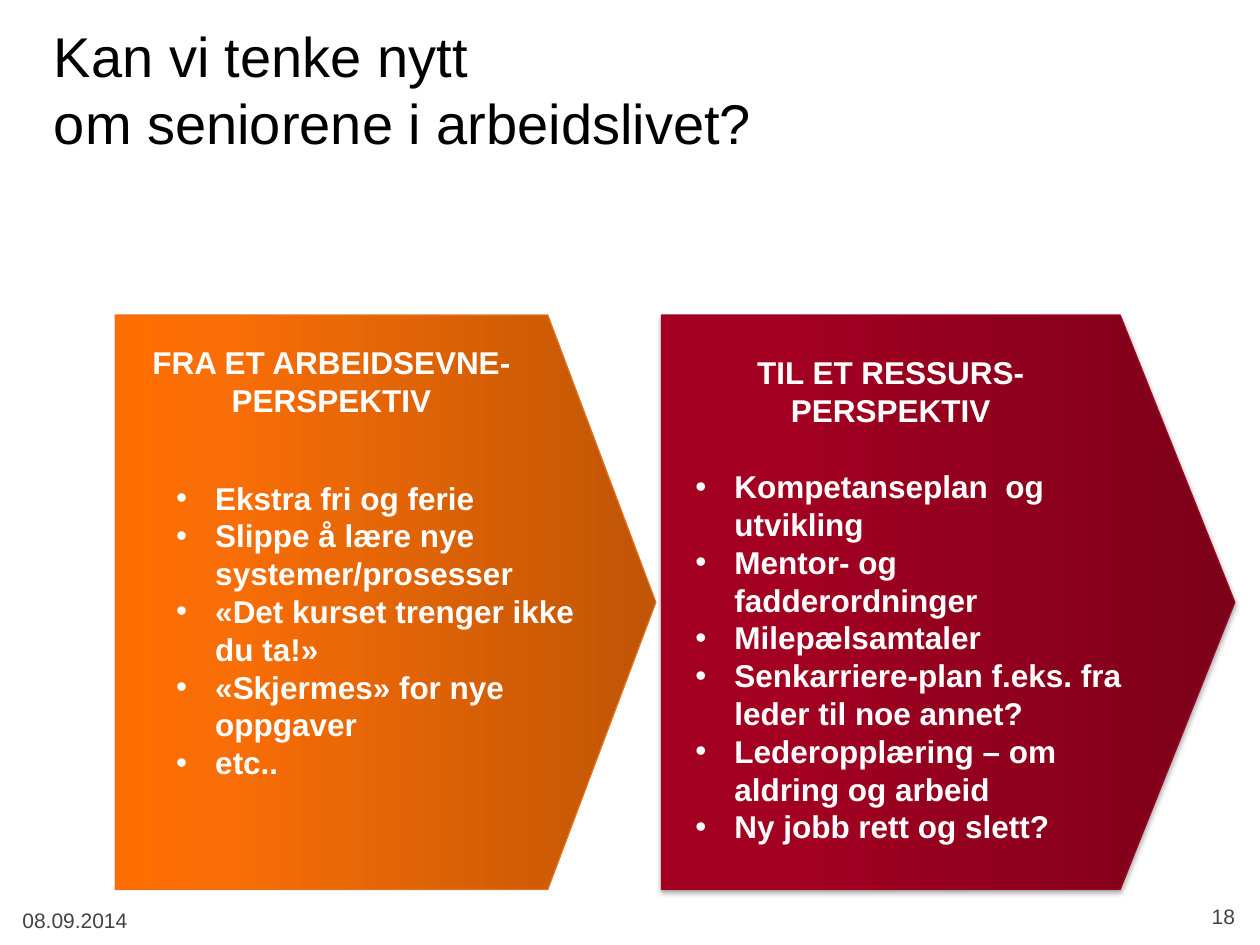
from lxml.etree import SubElement
from pptx import Presentation
from pptx.dml.color import RGBColor as RGB
from pptx.enum.shapes import MSO_SHAPE as SHAPE
from pptx.enum.text import MSO_ANCHOR as ANCHOR, PP_ALIGN as ALIGN
from pptx.oxml.ns import qn
from pptx.util import Inches, Pt

COLORS = {
    "black": "000000", "white": "FFFFFF", "grey": "424342",
    "orange": ["C05505", "F96E06", "FF6E01"], "orange_line": "E4731E",
    "red": ["7D0019", "A30021", "A40021"], "red_line": "9F0524",
}
STOPS = [0, 80, 100]
ABILITY = [
    "Ekstra fri og ferie",
    "Slippe å lære nye systemer/prosesser",
    "«Det kurset trenger ikke du ta!»",
    "«Skjermes» for nye oppgaver",
    "etc..",
]
RESOURCE = [
    "Kompetanseplan  og utvikling",
    "Mentor- og fadderordninger",
    "Milepælsamtaler",
    "Senkarriere-plan f.eks. fra leder til noe annet?",
    "Lederopplæring – om aldring og arbeid",
    "Ny jobb rett og slett?",
]


class Deck:
    """Style and current slide on a grid of 100 columns by 75 rows."""

    def __init__(self):
        self.prs = Presentation()
        self.prs.slide_width, self.prs.slide_height = Inches(10), Inches(7.5)
        self.s = self.prs.slides.add_slide(self.prs.slide_layouts[6])
        self.font = "Arial"

    def grid(self, *cells):
        return [round(c * self.prs.slide_width / 100) for c in cells]

    def set_text(self, tf, lines, size, color, bold=False, align=ALIGN.LEFT, bullet=False):
        tf.text = "\n".join(lines)
        for p in tf.paragraphs:
            p.alignment = align
            if bullet:
                pPr = p._p.get_or_add_pPr()
                indent = Inches(0.31)
                pPr.set("marL", str(indent))
                pPr.set("indent", str(-indent))
                SubElement(pPr, qn("a:buFont"), typeface=self.font)
                SubElement(pPr, qn("a:buChar"), char="•")
            for r in p.runs:
                r.font.name, r.font.size, r.font.bold = self.font, Pt(size), bold
                r.font.color.rgb = RGB.from_string(COLORS[color])

    def text(self, box, lines, size, color, anchor=ANCHOR.TOP, **style):
        tf = self.s.shapes.add_textbox(*self.grid(*box)).text_frame
        tf.word_wrap = True
        tf.vertical_anchor = anchor
        self.set_text(tf, lines, size, color, **style)

    def arrow(self, box, color, lines, gap, shadow=False):
        left, top, width, height = self.grid(*box)
        shift = (width - height) // 2
        sp = self.s.shapes.add_shape(
            SHAPE.FLOWCHART_OFFPAGE_CONNECTOR, left + shift, top - shift, height, width)
        sp.rotation = 270
        sp.line.color.rgb = RGB.from_string(COLORS[color + "_line"])
        sp.line.width = Pt(0.75)
        self.gradient(sp, COLORS[color])
        sp.shadow.inherit = False
        if shadow:
            self.cast_shadow(sp)
        tf = sp.text_frame
        tf.word_wrap = False
        tf.vertical_anchor = ANCHOR.TOP
        tf.margin_left = tf.margin_top = tf.margin_bottom = 0
        tf.margin_right = Inches(gap)
        tf._txBody.bodyPr.set("vert", "vert")
        self.set_text(tf, lines, 18, "white", bold=True, align=ALIGN.CENTER)

    def gradient(self, sp, colors):
        sp.fill.gradient()
        sp.fill.gradient_angle = 90
        stops = sp._element.spPr.find(qn("a:gradFill")).find(qn("a:gsLst"))
        for old in list(stops):
            stops.remove(old)
        for pos, color in zip(STOPS, colors):
            gs = SubElement(stops, qn("a:gs"), pos=str(pos * 1000))
            SubElement(gs, qn("a:srgbClr"), val=color)

    def cast_shadow(self, sp):
        effects = sp._element.spPr.find(qn("a:effectLst"))
        outer = SubElement(effects, qn("a:outerShdw"), blurRad=str(Pt(3.1)),
                           dist=str(Pt(1.8)), dir="5400000", rotWithShape="0")
        clr = SubElement(outer, qn("a:srgbClr"), val=COLORS["black"])
        SubElement(clr, qn("a:alpha"), val="35000")


def main():
    d = Deck()
    d.text((3.3, 0.8, 80, 12.5), ["Kan vi tenke nytt\vom seniorene i arbeidslivet?"],
           32, "black", anchor=ANCHOR.MIDDLE)
    d.arrow((9.15, 25, 42.9, 45.6), "orange", ["FRA ET ARBEIDSEVNE-", "PERSPEKTIV"], 0.22)
    d.arrow((52.5, 25, 45.5, 45.6), "red", ["TIL ET RESSURS-", "PERSPEKTIV"], 0.3, shadow=True)
    d.text((54.2, 36.6, 36.8, 31.3), RESOURCE, 18, "white", bold=True, bullet=True)
    d.text((13, 37.5, 34.5, 28.3), ABILITY, 18, "white", bold=True, bullet=True)
    d.text((0.8, 71.5, 23.3, 5.2), ["08.09.2014"], 12, "grey")
    d.text((75.7, 71.2, 23.3, 5.2), ["18"], 12, "grey", align=ALIGN.RIGHT)
    d.prs.save("out.pptx")


if __name__ == "__main__":
    main()
